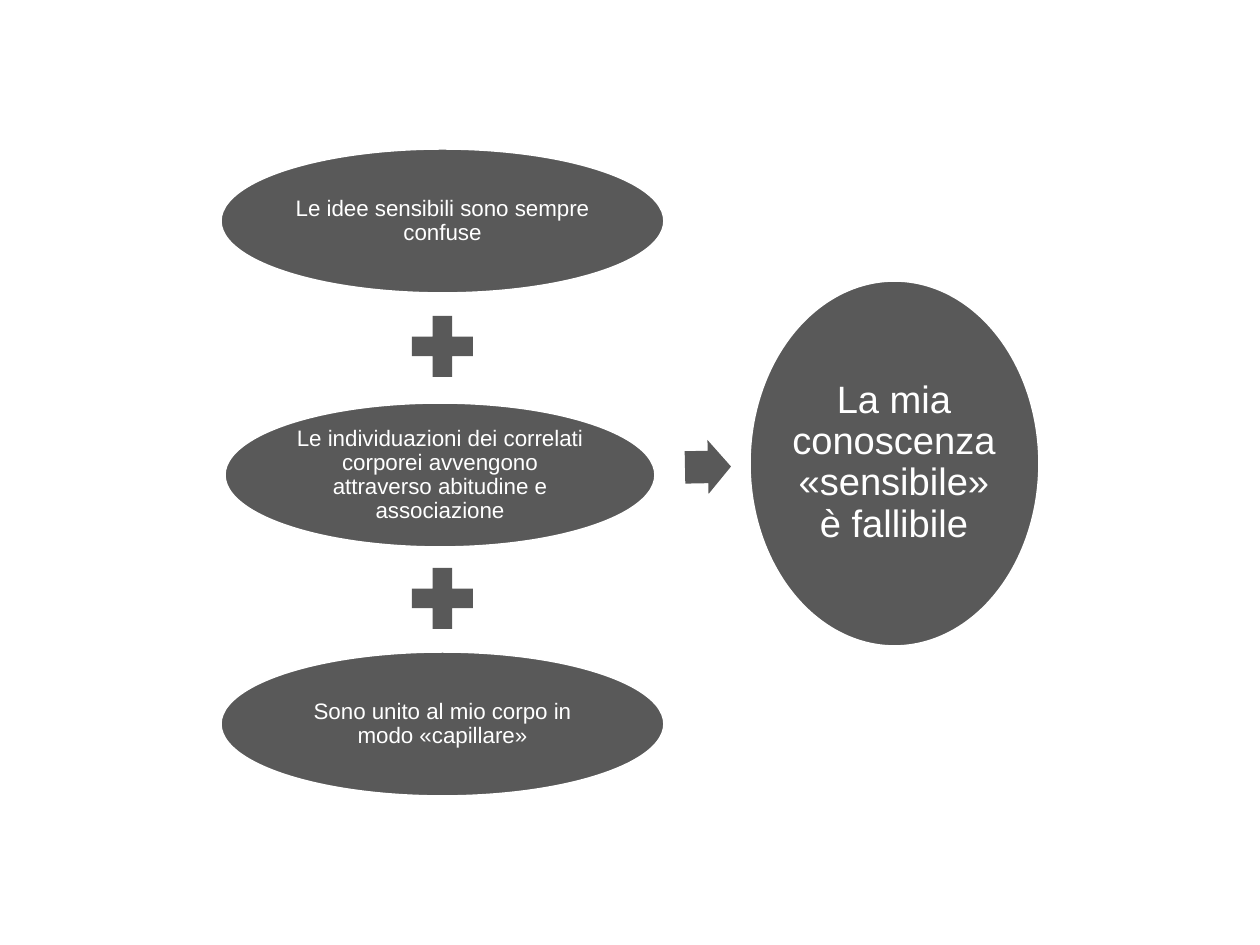
import math

import pptx
import pptx.util
import pptx.dml.color
import pptx.enum.shapes
import pptx.enum.text

PX = 8000
GREY = pptx.dml.color.RGBColor(0x59, 0x59, 0x59)
WHITE = pptx.dml.color.RGBColor(0xFF, 0xFF, 0xFF)
SHAPES = pptx.enum.shapes.MSO_SHAPE

PREMISES = [
    ("Le idee sensibili sono sempre confuse", (0, 0, 443)),
    ("Le individuazioni dei correlati corporei avvengono attraverso abitudine e associazione", (4, 2, 430)),
    ("Sono unito al mio corpo in modo «capillare»", (0, -1, 443)),
]
CONCLUSION = "La mia conoscenza «sensibile» è fallibile"


def add_figure(slide, kind, box, adjustments=(), outlined=False):
    figure = slide.shapes.add_shape(kind, *(length * PX for length in box))
    figure.shadow.inherit = False
    figure.fill.solid()
    figure.fill.fore_color.rgb = GREY
    if outlined:
        figure.line.color.rgb = WHITE
        figure.line.width = pptx.util.Pt(1)
    else:
        figure.line.fill.background()
    for index, value in enumerate(adjustments):
        figure.adjustments[index] = value
    return figure


def add_text(slide, text, box, size, inset, color=WHITE, font="Arial"):
    caption = slide.shapes.add_textbox(*(length * PX for length in box))
    frame = caption.text_frame
    frame.word_wrap = True
    frame.vertical_anchor = pptx.enum.text.MSO_ANCHOR.MIDDLE
    frame.margin_left = frame.margin_right = inset * PX
    frame.margin_top = frame.margin_bottom = inset * PX
    paragraph = frame.paragraphs[0]
    paragraph.alignment = pptx.enum.text.PP_ALIGN.CENTER
    paragraph.line_spacing = 0.9
    run = paragraph.add_run()
    run.text = text
    run.font.size = pptx.util.Pt(size)
    run.font.name = font
    run.font.color.rgb = color


def add_statement(slide, text, box, size, inset, extra_width=0):
    left, top, width, height = box
    add_figure(slide, SHAPES.OVAL, box, outlined=True)
    text_width = round(width / math.sqrt(2)) + extra_width
    text_height = round(height / math.sqrt(2))
    text_left = left + (width - text_width) // 2
    text_top = top + (height - text_height) // 2
    text_box = (text_left, text_top, text_width, text_height)
    add_text(slide, text, text_box, size=size, inset=inset)


def add_premises(slide, left, top, width, height):
    oval_height = 144
    plus_side = 83
    plus_drop = 156
    pitch = (height - oval_height) // (len(PREMISES) - 1)
    for row, (premise, (shift_x, shift_y, oval_width)) in enumerate(PREMISES):
        row_top = top + row * pitch
        oval_box = (left + shift_x, row_top + shift_y, oval_width, oval_height)
        add_statement(slide, premise, oval_box, size=14.1, inset=2)
        if row < len(PREMISES) - 1:
            plus_left = left + (width - plus_side) // 2
            plus_box = (plus_left, row_top + plus_drop, plus_side, plus_side)
            add_figure(slide, SHAPES.MATH_PLUS, plus_box, adjustments=[0.235])


def add_conclusion(slide, left, top, width, height):
    arrow_box = (left - 65, top + 159, 46, 54)
    arrow = add_figure(slide, SHAPES.RIGHT_ARROW, arrow_box, adjustments=[0.6, 0.5])
    arrow.rotation = 358.9
    oval_box = (left, top, width, height)
    add_statement(slide, CONCLUSION, oval_box, size=24, inset=3, extra_width=14)


def main():
    presentation = pptx.Presentation()
    presentation.slide_width = 1260 * PX
    presentation.slide_height = 945 * PX
    slide = presentation.slides.add_slide(presentation.slide_layouts[6])
    add_premises(slide, 221, 149, 443, 648)
    add_conclusion(slide, 750, 281, 289, 365)
    presentation.save("out.pptx")


if __name__ == "__main__":
    main()
